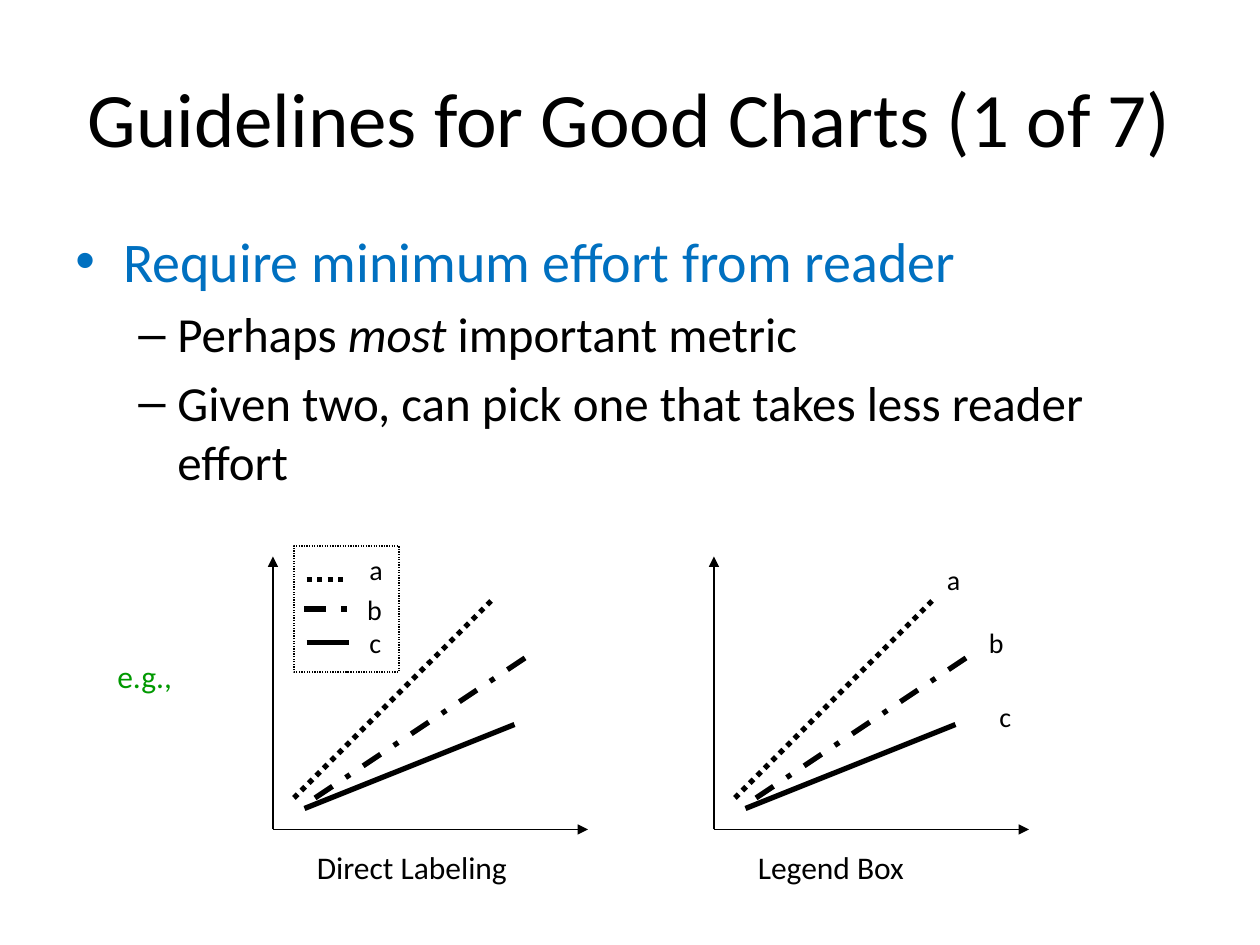
from typing import NamedTuple, Optional

from pptx import Presentation
from pptx.dml.color import RGBColor
from pptx.enum.dml import MSO_LINE
from pptx.enum.shapes import MSO_CONNECTOR, MSO_SHAPE
from pptx.enum.text import MSO_ANCHOR, MSO_AUTO_SIZE, PP_ALIGN
from pptx.oxml.ns import qn
from pptx.util import Inches, Pt

COLS, ROWS = 120, 90  # the slide as a grid of 1/12 inch cells
BLACK, BLUE, GREEN = "000000", "0070C0", "009900"


class Series(NamedTuple):
    name: str
    dash: Optional[MSO_LINE]
    start: tuple  # columns right of and rows above the origin
    end: tuple
    label: tuple  # direct label, from the origin
    key: tuple  # legend sample, from the origin
    key_label: tuple


class Bullet(NamedTuple):
    mark: str
    level: int
    left: float
    hang: float
    size: int
    color: str
    runs: list  # (text, italic)


SERIES = [
    Series("a", MSO_LINE.ROUND_DOT, (2, 3), (21, 22), (21, 26), (3.2, 23.8), (8, 27)),
    Series("c", None, (3, 2), (23, 10), (26, 13), (3.2, 17.8), (8, 20)),
    Series("b", MSO_LINE.DASH_DOT, (4, 3), (25, 17), (25, 20), (3, 21), (7.8, 23.2)),
]
BULLETS = [
    Bullet("•", 0, 0.38, 0.38, 32, BLUE, [("Require minimum effort from reader", False)]),
    Bullet("–", 1, 0.81, 0.31, 28, BLACK,
           [("Perhaps ", False), ("most", True), (" important metric", False)]),
    Bullet("–", 1, 0.81, 0.31, 28, BLACK,
           [("Given two, can pick one that takes less reader effort", False)]),
]

prs = Presentation()
prs.slide_width, prs.slide_height = Inches(10), Inches(7.5)
s = prs.slides.add_slide(prs.slide_layouts[6])


def rgb(color: str) -> RGBColor:
    return RGBColor.from_string(color)


def x(col: float) -> int:
    return round(prs.slide_width * col / COLS)


def y(row: float) -> int:
    return round(prs.slide_height * row / ROWS)


def add_run(p, text: str, size: float, color: str, italic: bool = False) -> None:
    r = p.add_run()
    r.text = text
    r.font.name, r.font.size = "Calibri", Pt(size)
    r.font.color.rgb = rgb(color)
    r.font.italic = italic


def add_box(shapes, col: float, row: float, cols: float, rows: float):
    tf = shapes.add_textbox(x(col), y(row), x(cols), y(rows)).text_frame
    tf.word_wrap = True
    return tf


def add_label(shapes, text: str, col: float, row: float, cols: float,
              size: int = 18, color: str = BLACK) -> None:
    tf = add_box(shapes, col, row, cols, 4.8 if size == 18 else 4.4)
    tf.word_wrap = False
    tf.auto_size = MSO_AUTO_SIZE.SHAPE_TO_FIT_TEXT
    add_run(tf.paragraphs[0], text, size, color)


def add_line(shapes, start: tuple, end: tuple, width: float = 3,
             dash: Optional[MSO_LINE] = None, arrow: bool = False) -> None:
    sp = shapes.add_connector(MSO_CONNECTOR.STRAIGHT, x(start[0]), y(start[1]),
                              x(end[0]), y(end[1]))
    sp.line.color.rgb = rgb(BLACK)
    sp.line.width = Pt(width)
    if dash is not None:
        sp.line.dash_style = dash
    if arrow:
        tail = sp.line._get_or_add_ln().makeelement(qn("a:tailEnd"), {"type": "triangle"})
        sp.line._get_or_add_ln().append(tail)
    pr = sp._element.spPr
    pr.append(pr.makeelement(qn("a:effectLst"), {}))


def add_bullet(p, b: Bullet) -> None:
    p.level = b.level
    p.space_before = Pt(b.size * 0.2)
    pPr = p._p.get_or_add_pPr()
    pPr.set("marL", str(Inches(b.left)))
    pPr.set("indent", str(-Inches(b.hang)))
    font = pPr.makeelement(qn("a:buFont"), {"typeface": "Arial"})
    mark = pPr.makeelement(qn("a:buChar"), {"char": b.mark})
    pPr.extend([font, mark])
    for text, italic in b.runs:
        add_run(p, text, b.size, b.color, italic)


def add_plot(shapes, left: float, bottom: float, legend: bool) -> None:
    def at(offset: tuple) -> tuple:
        return left + offset[0], bottom - offset[1]

    # Axes
    for tip in ((0, 26), (30, 0)):
        add_line(shapes, at((0, 0)), at(tip), 0.75, arrow=True)
    # Data lines with their labels
    for d in SERIES:
        add_line(shapes, at(d.start), at(d.end), dash=d.dash)
        if legend:
            col, row = at(d.key)
            add_line(shapes, (col, row), (col + 4, row), dash=d.dash)
        add_label(shapes, d.name, *at(d.key_label if legend else d.label), 3.6, 16)
    # Legend frame
    if legend:
        col, row = at((2, 27))
        sp = shapes.add_shape(MSO_SHAPE.RECTANGLE, x(col), y(row), x(10), y(12))
        sp.shadow.inherit = False
        sp.fill.background()
        sp.line.color.rgb = rgb(BLACK)
        sp.line.width = Pt(0.75)
        sp.line.dash_style = MSO_LINE.ROUND_DOT


# Title
tf = add_box(s.shapes, 6, 3.6, 108, 15)
tf.vertical_anchor = MSO_ANCHOR.MIDDLE
tf.paragraphs[0].alignment = PP_ALIGN.CENTER
add_run(tf.paragraphs[0], "Guidelines for Good Charts (1 of 7)", 44, BLACK)

# Bullets
tf = add_box(s.shapes, 6, 21, 108, 59.4)
for i, b in enumerate(BULLETS):
    add_bullet(tf.add_paragraph() if i else tf.paragraphs[0], b)

# Example plots and captions
add_plot(s.shapes.add_group_shape().shapes, 26, 79, legend=True)
add_label(s.shapes, "Direct Labeling", 29, 80.2, 20.8)
add_plot(s.shapes, 68, 79, legend=False)
add_label(s.shapes, "Legend Box", 71, 80.2, 16.6)
add_label(s.shapes, "e.g.,", 10, 62, 8.4, color=GREEN)

prs.save("out.pptx")
